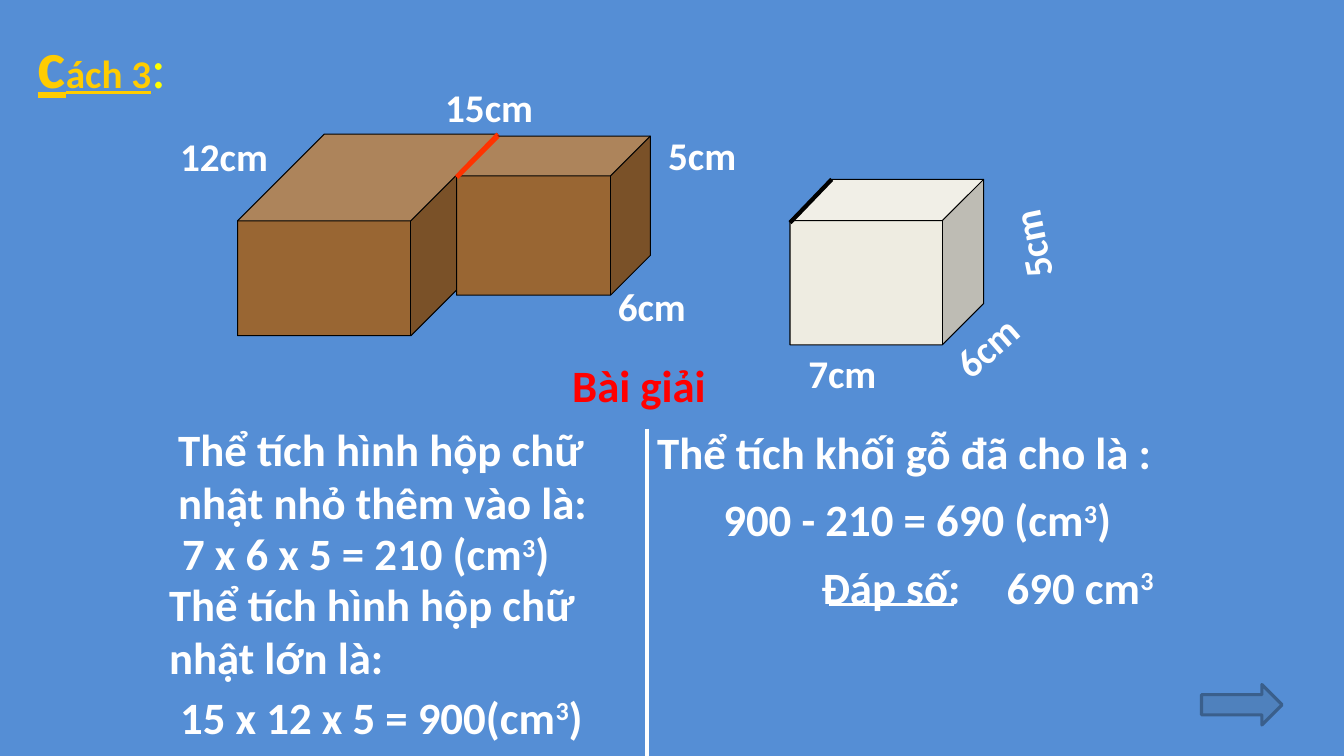
from lxml import etree
from pptx import Presentation
from pptx.dml.color import RGBColor
from pptx.enum.shapes import MSO_CONNECTOR, MSO_SHAPE
from pptx.enum.text import MSO_ANCHOR, MSO_AUTO_SIZE, PP_ALIGN
from pptx.oxml.ns import qn
from pptx.util import Cm, Pt

CUBE = MSO_SHAPE.CUBE
RIGHT_ARROW = MSO_SHAPE.RIGHT_ARROW
STRAIGHT = MSO_CONNECTOR.STRAIGHT
TOP = MSO_ANCHOR.TOP
LEFT = PP_ALIGN.LEFT
NO_FIT = MSO_AUTO_SIZE.NONE
GROW = MSO_AUTO_SIZE.SHAPE_TO_FIT_TEXT
TITLE_ONLY = 5

COLORS = {
    "background": "558ED5",
    "wood": "996633",
    "ivory": "EEECE1",
    "black": "000000",
    "white": "FFFFFF",
    "cut": "FF3300",
    "heading": "FF0000",
    "gold": "FFCC00",
    "yellow": "FFFF00",
    "arrow": "4F81BD",
    "arrow_edge": "3A5F8C",
}


def color(name):
    return RGBColor.from_string(COLORS[name])


class SolutionPage:
    font_name = "Calibri"
    label_size = 28
    body_size = 32

    def __init__(self, deck):
        self.page = deck.slides.add_slide(deck.slide_layouts[TITLE_ONLY])
        self.page.background.fill.solid()
        self.page.background.fill.fore_color.rgb = color("background")
        self.shapes = self.page.shapes

    def start_group(self):
        self.shapes = self.page.shapes.add_group_shape().shapes

    def end_group(self):
        self.shapes = self.page.shapes

    def title(self, left, top, width, height, spans):
        box = self.page.shapes.title
        box.left, box.top, box.width, box.height = Cm(left), Cm(top), Cm(width), Cm(height)
        frame = box.text_frame
        frame.auto_size = NO_FIT
        frame.vertical_anchor = TOP
        frame.margin_left = Cm(0.54)
        para = frame.paragraphs[0]
        para.alignment = LEFT
        para.font.name = self.font_name
        for text, size, tint, marked in spans:
            span = para.add_run()
            span.text = text
            span.font.size = Pt(size)
            span.font.color.rgb = color(tint)
            span.font.bold = marked
            span.font.underline = marked

    def text(self, text, left, top, width, height=1.6, size=body_size, tint="white", rotation=0):
        box = self.shapes.add_textbox(Cm(left), Cm(top), Cm(width), Cm(height))
        box.rotation = rotation
        frame = box.text_frame
        frame.word_wrap = True
        frame.auto_size = GROW
        para = frame.paragraphs[0]
        para.font.name = self.font_name
        para.font.size = Pt(size)
        para.font.bold = True
        para.font.color.rgb = color(tint)
        for index, part in enumerate(text.split("^")):
            if part:
                span = para.add_run()
                span.text = part
                if index % 2:
                    span._r.get_or_add_rPr().set("baseline", "30000")

    def label(self, text, left, top, width, rotation=0):
        self.text(text, left, top, width, 1.45, self.label_size, rotation=rotation)

    def shape(self, kind, left, top, width, height, fill, edge, weight):
        shape = self.shapes.add_shape(kind, Cm(left), Cm(top), Cm(width), Cm(height))
        shape.shadow.inherit = False
        shape.fill.solid()
        shape.fill.fore_color.rgb = color(fill)
        shape.line.color.rgb = color(edge)
        shape.line.width = Pt(weight)
        return shape

    def block(self, left, top, width, height, fill, depth=0.25):
        cube = self.shape(CUBE, left, top, width, height, fill, "black", 0.75)
        cube.adjustments[0] = depth

    def line(self, x1, y1, x2, y2, tint, weight=3):
        line = self.shapes.add_connector(STRAIGHT, Cm(x1), Cm(y1), Cm(x2), Cm(y2))
        line.line.color.rgb = color(tint)
        line.line.width = Pt(weight)
        etree.SubElement(line._element.spPr, qn("a:effectLst"))


def main():
    deck = Presentation()
    deck.slide_width, deck.slide_height = Cm(33.87), Cm(19.05)
    page = SolutionPage(deck)

    page.title(0.41, 0.41, 5.92, 2.29, [
        ("c", 48, "gold", True),
        ("ách 3", 28, "gold", True),
        (":", 40, "yellow", False),
    ])

    page.start_group()
    page.block(5.99, 3.38, 6.55, 5.08, "wood", 0.43)
    page.line(11.51, 4.45, 12.55, 3.38, "cut")
    page.block(11.51, 3.43, 4.88, 4.01, "wood")
    page.line(11.51, 4.47, 12.55, 3.43, "cut")
    page.label("12cm", 4.29, 3.2, 2.97)
    page.label("15cm", 10.97, 1.98, 3.18)
    page.label("5cm", 16.59, 3.18, 2.54)
    page.label("6cm", 15.32, 6.99, 2.97)

    page.start_group()
    page.block(19.91, 4.52, 4.88, 4.17, "ivory")
    page.line(19.91, 5.61, 20.96, 4.52, "black")
    page.label("7cm", 20.12, 8.69, 3.18)
    page.label("5cm", 24.51, 5.13, 2.84, 258.4)
    page.label("6cm", 23.67, 7.75, 2.97, 318.7)
    page.end_group()

    page.text("Bài giải", 14.17, 8.89, 5.08, tint="heading")
    page.text("Thể tích hình hộp chữ nhật lớn là:", 4.01, 14.4, 10.8, 2.97)
    page.text("Thể tích hình hộp chữ nhật nhỏ thêm vào là:", 4.24, 10.49, 11.43, 2.97)
    page.text("7 x 6 x 5 = 210 (cm^3^)", 4.34, 13.13, 10.8)
    page.text("Thể tích khối gỗ đã cho là :", 16.31, 10.59, 13.34)
    page.text("900 - 210 = 690 (cm^3^)", 17.98, 12.27, 10.59)

    page.start_group()
    page.text("Đáp số:", 20.45, 13.97, 5.28)
    page.line(20.88, 15.24, 24.05, 15.24, "white", 2.25)
    page.end_group()

    page.text("690 cm^3^", 25.12, 13.97, 5.51)
    page.text("15 x 12 x 5 = 900(cm^3^)", 4.29, 17.25, 12.27)
    page.line(16.31, 10.8, 16.31, 19.05, "white")
    page.shape(RIGHT_ARROW, 30.28, 17.25, 2.03, 1.02, "arrow", "arrow_edge", 2.25)

    deck.save("out.pptx")


if __name__ == "__main__":
    main()
